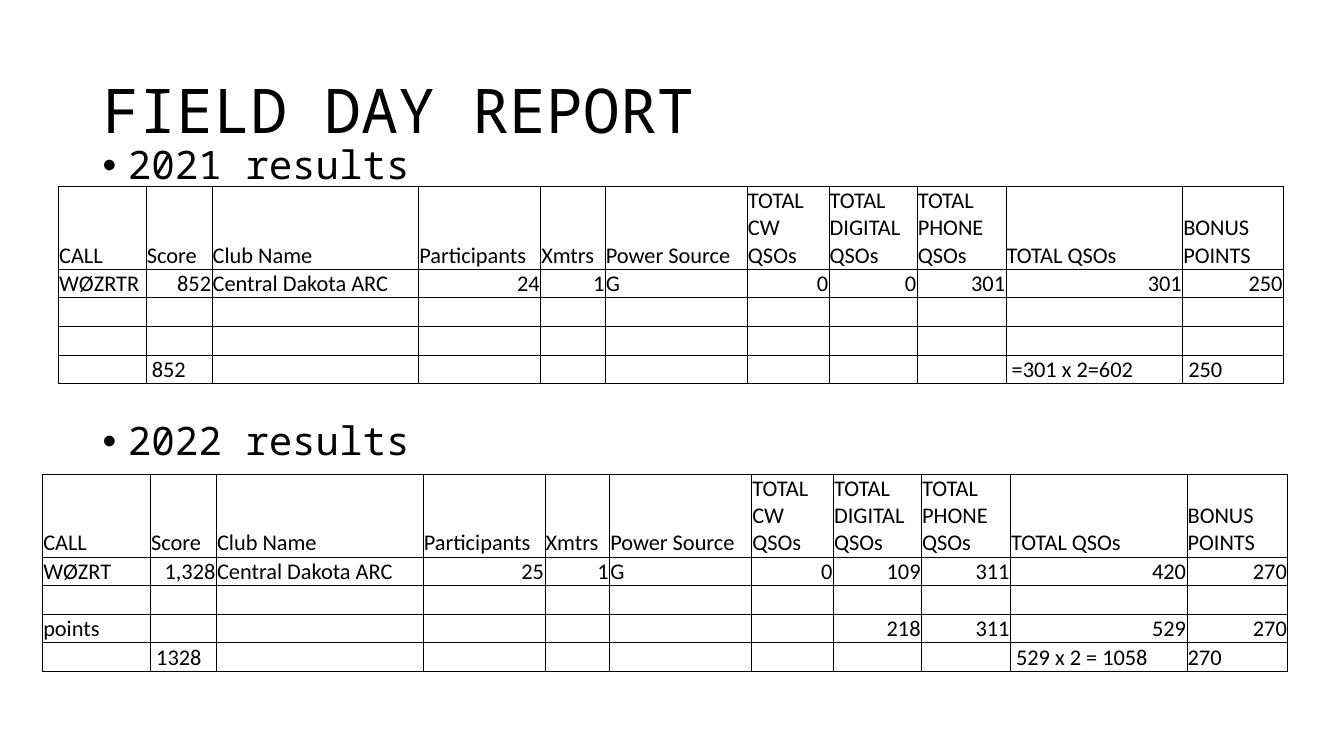
import lxml.etree
import pptx
import pptx.dml.color
import pptx.enum.text
import pptx.oxml.ns
import pptx.util

Cm = pptx.util.Cm
Pt = pptx.util.Pt
qn = pptx.oxml.ns.qn
ALIGN = pptx.enum.text.PP_ALIGN
ANCHOR = pptx.enum.text.MSO_ANCHOR
BLACK = "000000"
TABLE_SIZE = 16
HEADINGS = [
    "CALL", "Score", "Club Name", "Participants", "Xmtrs", "Power Source",
    "TOTAL CW QSOs", "TOTAL DIGITAL QSOs", "TOTAL PHONE QSOs", "TOTAL QSOs", "BONUS POINTS",
]
SHARED_WIDTHS = [1.66, 5.21, 3.07, 1.63, 3.58, 2.06, 2.22, 2.24, 4.45, 2.54]
HEADER_HEIGHT = 2.09
ROW_HEIGHT = 0.72
RESULTS_2021 = [
    HEADINGS,
    ["WØZRTR", "852", "Central Dakota ARC", "24", "1", "G", "0", "0", "301", "301", "250"],
    [""] * 11,
    [""] * 11,
    ["", " 852", *[""] * 7, " =301 x 2=602", " 250"],
]
RESULTS_2022 = [
    HEADINGS,
    ["WØZRT", "1,328", "Central Dakota ARC", "25", "1", "G", "0", "109", "311", "420", "270"],
    [""] * 11,
    ["points", *[""] * 6, "218", "311", "529", "270"],
    ["", " 1328", *[""] * 7, " 529 x 2 = 1058", "270"],
]


def colour(value):
    return pptx.dml.color.RGBColor.from_string(value)


def write(para, text, size, font="Noto Sans Mono", align=ALIGN.LEFT, spacing=None, before=None):
    para.alignment = align
    if spacing is not None:
        para.line_spacing = spacing
    if before is not None:
        para.space_before = Pt(before)
    if not text:
        end = lxml.etree.SubElement(para._p, qn("a:endParaRPr"))
        end.set("sz", str(size * 100))
        lxml.etree.SubElement(end, qn("a:latin")).set("typeface", font)
        return
    span = para.add_run()
    span.text = text
    span.font.name = font
    span.font.size = Pt(size)
    span.font.color.rgb = colour(BLACK)


def place(box, left, top, width, height, anchor):
    box.left, box.top, box.width, box.height = Cm(left), Cm(top), Cm(width), Cm(height)
    frame = box.text_frame
    frame.auto_size = pptx.enum.text.MSO_AUTO_SIZE.NONE
    frame.word_wrap = True
    frame.vertical_anchor = anchor
    return frame


def add_bullet(para, text, before):
    write(para, text, 28, spacing=0.9, before=before)
    properties = para._p.get_or_add_pPr()
    properties.set("marL", str(Cm(0.64)))
    properties.set("indent", str(Cm(-0.64)))
    lxml.etree.SubElement(properties, qn("a:buFont")).set("typeface", "Arial")
    lxml.etree.SubElement(properties, qn("a:buChar")).set("char", "•")


def add_borders(cell):
    properties = cell._tc.get_or_add_tcPr()
    for position, side in enumerate(("a:lnL", "a:lnR", "a:lnT", "a:lnB")):
        line = lxml.etree.Element(qn(side), w=str(Pt(0.5)))
        fill = lxml.etree.SubElement(line, qn("a:solidFill"))
        lxml.etree.SubElement(fill, qn("a:srgbClr")).set("val", BLACK)
        properties.insert(position, line)


def fill_cell(cell, text, align):
    cell.margin_left = cell.margin_right = cell.margin_top = Cm(0.02)
    cell.margin_bottom = 0
    cell.vertical_anchor = ANCHOR.BOTTOM
    cell.fill.background()
    add_borders(cell)
    write(cell.text_frame.paragraphs[0], text, TABLE_SIZE, font="Calibri", align=align)


def add_results(page, left, top, call_width, rows):
    widths = [call_width, *SHARED_WIDTHS]
    heights = [HEADER_HEIGHT] + [ROW_HEIGHT] * (len(rows) - 1)
    table = page.shapes.add_table(
        len(rows), len(widths), Cm(left), Cm(top), Cm(sum(widths)), Cm(sum(heights))
    ).table
    table.first_row = False
    table.horz_banding = False
    for column, width in zip(table.columns, widths):
        column.width = Cm(width)
    for row, height, texts in zip(table.rows, heights, rows):
        row.height = Cm(height)
        for cell, text in zip(row.cells, texts):
            is_number = text.replace(",", "").isdigit() and texts is not rows[-1]
            fill_cell(cell, text, ALIGN.RIGHT if is_number else ALIGN.LEFT)


def main():
    deck = pptx.Presentation()
    deck.slide_width, deck.slide_height = Cm(33.87), Cm(19.05)
    page = deck.slides.add_slide(deck.slide_layouts[1])
    title, body = page.placeholders
    heading = place(title, 2.33, 1.01, 29.21, 3.68, ANCHOR.MIDDLE)
    write(heading.paragraphs[0], "FIELD DAY REPORT", 44, spacing=0.9)
    bullets = place(body, 2.33, 3.55, 29.21, 14.48, ANCHOR.TOP)
    add_bullet(bullets.paragraphs[0], "2021 results", before=10)
    add_bullet(bullets.add_paragraph(), "2022 results", before=167)
    add_results(page, 1.47, 4.69, 2.21, RESULTS_2021)
    add_results(page, 1.07, 11.94, 2.72, RESULTS_2022)
    deck.save("out.pptx")


if __name__ == "__main__":
    main()
